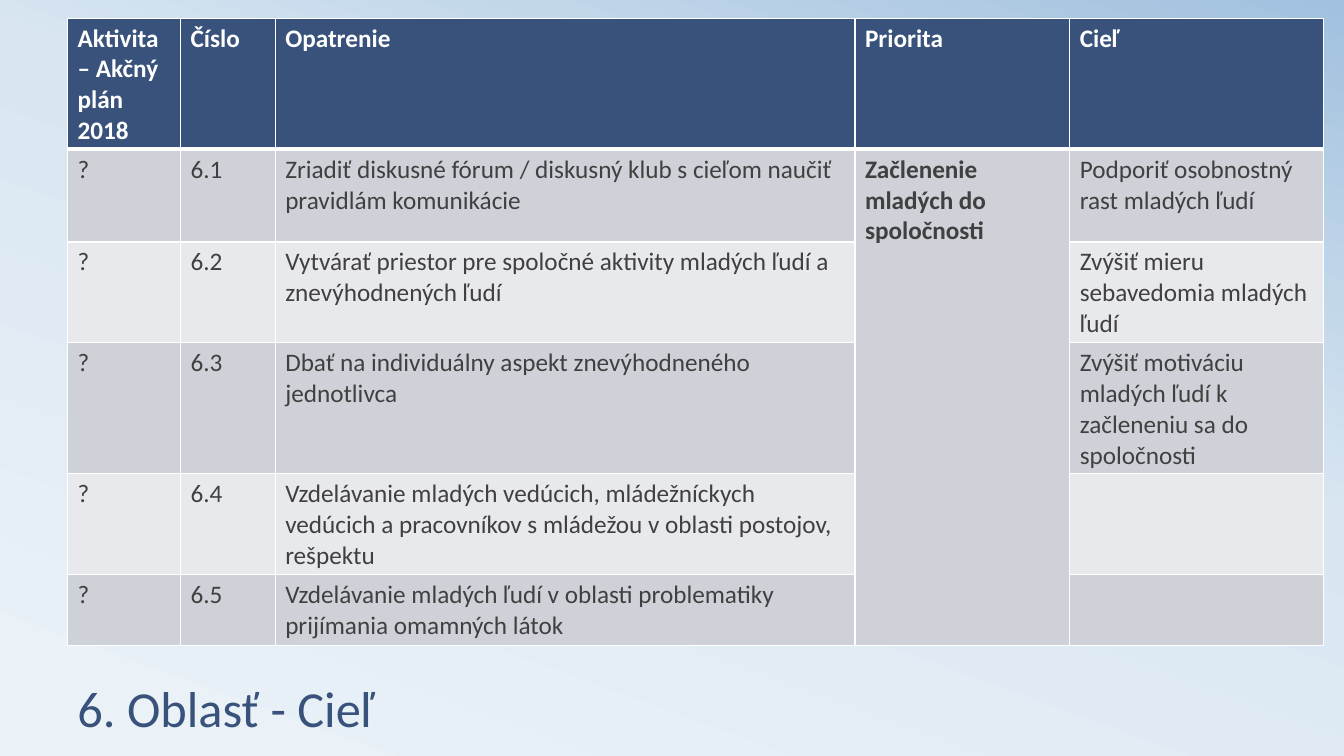
from copy import deepcopy
from typing import NamedTuple

from lxml import etree
from pptx import Presentation
from pptx.dml.color import RGBColor
from pptx.enum.text import MSO_ANCHOR
from pptx.oxml.ns import qn
from pptx.util import Inches, Pt

BOTTOM = MSO_ANCHOR.BOTTOM
FONT = "Calibri"
COLORS = {
    "navy": "39527B",
    "white": "FFFFFF",
    "text": "404040",
    "band_dark": "CED1D7",
    "band_light": "E8E9EC",
}
BACKGROUND_STOPS = [(0, "ECF3F8"), (0.58, "D9E6F2"), (1, "A1C1DE")]


class Measure(NamedTuple):
    number: str
    action: str
    goal: str = ""


HEADERS = ["Aktivita – Akčný plán 2018", "Číslo", "Opatrenie", "Priorita", "Cieľ"]
PRIORITY = "Začlenenie mladých do spoločnosti"
MEASURES = [
    Measure("6.1", "Zriadiť diskusné fórum / diskusný klub s cieľom naučiť pravidlám komunikácie",
            "Podporiť osobnostný rast mladých ľudí"),
    Measure("6.2", "Vytvárať priestor pre spoločné aktivity mladých ľudí a znevýhodnených ľudí",
            "Zvýšiť mieru sebavedomia mladých ľudí"),
    Measure("6.3", "Dbať na individuálny aspekt znevýhodneného jednotlivca",
            "Zvýšiť motiváciu mladých ľudí k začleneniu sa do spoločnosti"),
    Measure("6.4", "Vzdelávanie mladých vedúcich, mládežníckych vedúcich a pracovníkov "
                   "s mládežou v oblasti postojov, rešpektu"),
    Measure("6.5", "Vzdelávanie mladých ľudí v oblasti problematiky prijímania omamných látok"),
]
COLUMN_WIDTHS = [1.12, 0.94, 5.75, 2.13, 2.52]
ROW_HEIGHTS = [0.92] * 5 + [0.65]
PRIORITY_COLUMN = 3


def paint_background(slide) -> None:
    fill = slide.background.fill
    fill.gradient()
    fill.gradient_angle = 70
    stop_list = slide.element.find(".//" + qn("a:gsLst"))
    stop_list.append(deepcopy(stop_list[-1]))
    for stop, (position, color) in zip(fill.gradient_stops, BACKGROUND_STOPS):
        stop.position = position
        stop.color.rgb = RGBColor.from_string(color)


def add_run(p, text: str, size: float, color: str, bold: bool = False) -> None:
    r = p.add_run()
    r.text = text
    r.font.name = FONT
    r.font.size = Pt(size)
    r.font.bold = bold
    r.font.color.rgb = RGBColor.from_string(COLORS[color])


def set_borders(cell, bottom_width: float) -> None:
    """Draw white borders; they must precede the fill in the cell properties."""
    tc_pr = cell._tc.get_or_add_tcPr()
    widths = {"a:lnL": 1, "a:lnR": 1, "a:lnT": 1, "a:lnB": bottom_width}
    for index, (tag, width) in enumerate(widths.items()):
        line = etree.Element(qn(tag), w=str(Pt(width)))
        solid = etree.SubElement(line, qn("a:solidFill"))
        etree.SubElement(solid, qn("a:srgbClr"), val=COLORS["white"])
        tc_pr.insert(index, line)


def fill_cell(cell, text: str, fill: str, color: str, bold: bool, bottom_width: float) -> None:
    cell.fill.solid()
    cell.fill.fore_color.rgb = RGBColor.from_string(COLORS[fill])
    set_borders(cell, bottom_width)
    if text:
        add_run(cell.text_frame.paragraphs[0], text, 18, color, bold)


def add_measures_table(slide) -> None:
    rows = [HEADERS]
    for i, m in enumerate(MEASURES):
        rows.append(["?", m.number, m.action, "" if i else PRIORITY, m.goal])
    table = slide.shapes.add_table(
        len(rows), len(HEADERS), Inches(0.67), Inches(0.18),
        Inches(sum(COLUMN_WIDTHS)), Inches(sum(ROW_HEIGHTS))).table
    for column, width in zip(table.columns, COLUMN_WIDTHS):
        column.width = Inches(width)
    for row, height in zip(table.rows, ROW_HEIGHTS):
        row.height = Inches(height)
    table.cell(1, PRIORITY_COLUMN).merge(table.cell(len(MEASURES), PRIORITY_COLUMN))
    for i, texts in enumerate(rows):
        for j, text in enumerate(texts):
            cell = table.cell(i, j)
            if i == 0:
                fill_cell(cell, text, "navy", "white", True, 3)
            else:
                is_priority = j == PRIORITY_COLUMN
                band = "band_dark" if i % 2 or is_priority else "band_light"
                fill_cell(cell, text, band, "text", is_priority, 1)


def add_title(slide, text: str) -> None:
    sp = slide.shapes.add_textbox(Inches(0.67), Inches(6.19), Inches(12), Inches(1.17))
    tf = sp.text_frame
    tf.word_wrap = True
    tf.vertical_anchor = BOTTOM
    p = tf.paragraphs[0]
    p.line_spacing = 0.8
    add_run(p, text, 36, "navy")


def main() -> None:
    prs = Presentation()
    prs.slide_width, prs.slide_height = Inches(13.33), Inches(7.5)
    slide = prs.slides.add_slide(prs.slide_layouts[6])
    paint_background(slide)
    add_title(slide, "6. Oblasť - Cieľ")
    add_measures_table(slide)
    prs.save("out.pptx")


if __name__ == "__main__":
    main()
